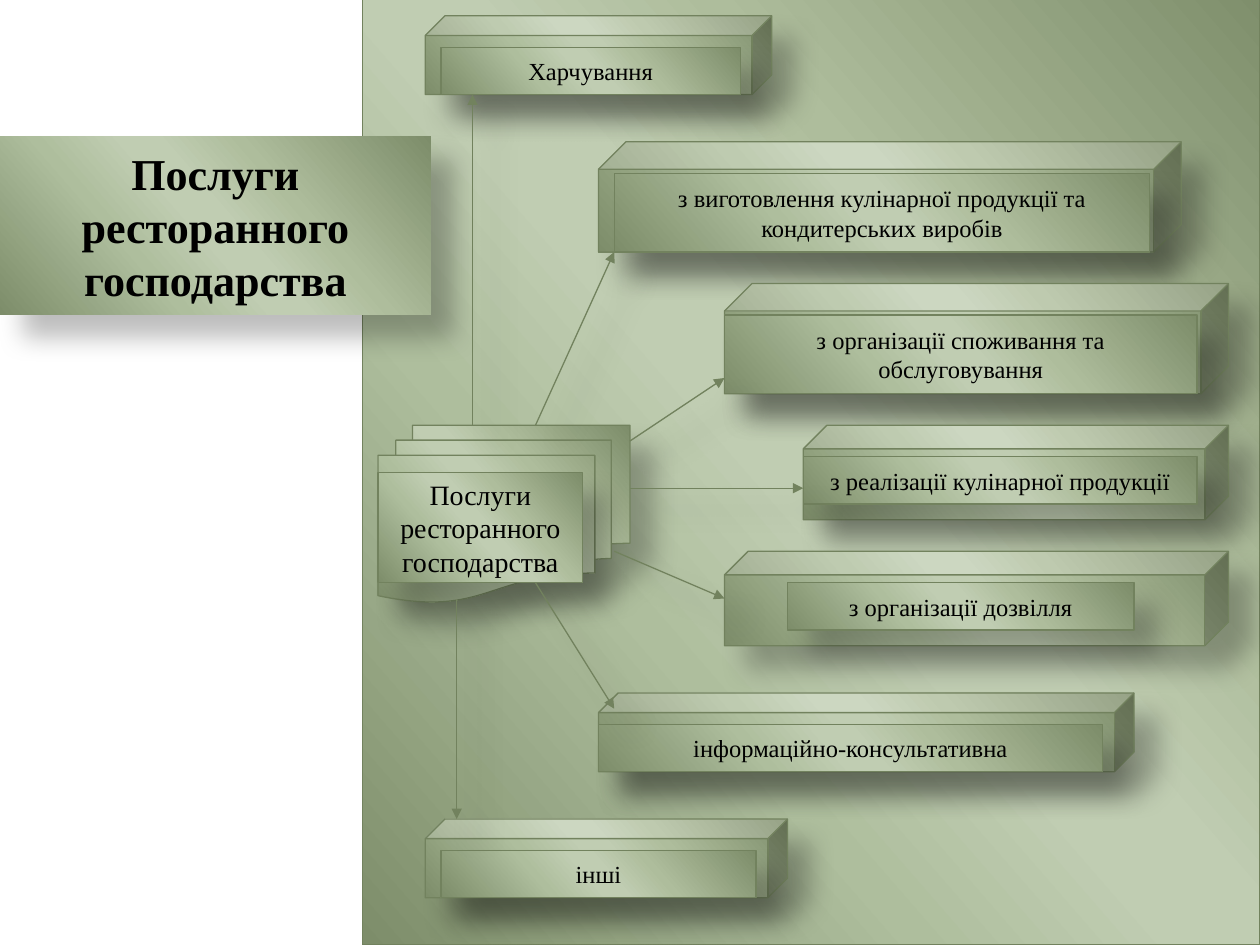
from lxml import etree
from pptx import Presentation, util as u
from pptx.dml.color import RGBColor
from pptx.enum import shapes, text
from pptx.oxml import ns

COLUMNS, ROWS = 80, 60
CELL = u.Inches(10) // COLUMNS
GRADIENT = {0: "7D8D6A", 33: "AEBD9C", 47: "C0CDB2",
            53: "C0CDB2", 68: "AEBE9D", 100: "7D8D6A"}
EDGE = "72825E"
HEADING = "Послуги ресторанного господарства"
SERVICES = [
    ("Харчування", (27, 1, 22, 5), (28, 3, 19, 3)),
    ("з виготовлення кулінарної продукції та кондитерських виробів",
     (38, 9, 37, 7), (39, 11, 34, 5)),
    ("з організації споживання та обслуговування", (46, 18, 32, 7), (46, 20, 30, 5)),
    ("з реалізації кулінарної продукції", (51, 27, 27, 6), (51, 29, 25, 3)),
    ("з організації дозвілля", (46, 35, 32, 6), (50, 37, 22, 3)),
    ("інформаційно-консультативна", (38, 44, 34, 5), (38, 46, 32, 3)),
    ("інші", (27, 52, 23, 5), (28, 54, 20, 3)),
]
ARROWS = [
    ((30, 27), (30, 6)), ((34, 27), (39, 16)), ((40, 28), (46, 24)),
    ((40, 31), (51, 31)), ((39, 35), (46, 38)), ((34, 37), (39, 45)),
    ((29, 38), (29, 52)),
]


def color(value):
    """Turn a hex string into a colour."""
    return RGBColor.from_string(value)


def grid(*cells):
    """Turn grid columns and rows into lengths."""
    return [u.Emu(round(cell * CELL)) for cell in cells]


def node(parent, tag, **values):
    """Add a drawing element with its attributes."""
    return etree.SubElement(parent, ns.qn(tag), {k: str(v) for k, v in values.items()})


def cast_shadow(part):
    """Give a part the soft shadow down to the right."""
    properties = part._element.spPr
    effects = properties.find(ns.qn("a:effectLst"))
    if effects is None:
        effects = node(properties, "a:effectLst")
    shade = node(effects, "a:outerShdw", blurRad=u.Pt(15), dist=u.Pt(18),
                 dir=45 * 60000, sy=90000, rotWithShape=0)
    node(node(shade, "a:srgbClr", val="000000"), "a:alpha", val=26000)


def paint(part):
    """Fill a part with the green gradient and shade it."""
    part.fill.gradient()
    gradient = part._element.spPr.find(ns.qn("a:gradFill"))
    gradient.clear()
    stops = node(gradient, "a:gsLst")
    for share, value in GRADIENT.items():
        node(node(stops, "a:gs", pos=share * 1000), "a:srgbClr", val=value)
    node(gradient, "a:lin", ang=139 * 60000, scaled=0)
    part.shadow.inherit = False
    cast_shadow(part)


def write(part, wording, **font_format):
    """Write centred black text in a part."""
    frame = part.text_frame
    frame.text = wording
    frame_format = {"word_wrap": True, "auto_size": text.MSO_AUTO_SIZE.NONE,
                    "vertical_anchor": text.MSO_ANCHOR.MIDDLE}
    for name, value in frame_format.items():
        setattr(frame, name, value)
    paragraph = frame.paragraphs[0]
    paragraph.alignment = text.PP_ALIGN.CENTER
    font = paragraph.runs[0].font
    for name, value in {"name": "Times New Roman", **font_format}.items():
        setattr(font, name, value)
    font.color.rgb = color("000000")


def add_panel(diagram, kind, box):
    """Add one edged green panel in a grid box."""
    panel = diagram.add_shape(kind, *grid(*box))
    paint(panel)
    panel.line.color.rgb = color(EDGE)
    panel.line.width = u.Pt(0.75)
    return panel


def add_label(diagram, wording, box, size):
    """Add a flat panel with wording."""
    label = add_panel(diagram, shapes.MSO_SHAPE.RECTANGLE, box)
    write(label, wording, size=u.Pt(size))


def add_service(diagram, wording, block_box, label_box):
    """Add a service as a block with a label on its front."""
    add_panel(diagram, shapes.MSO_SHAPE.CUBE, block_box)
    add_label(diagram, wording, label_box, 14)


def add_arrow(diagram, start, end):
    """Add an arrow from the documents to a service."""
    arrow = diagram.add_connector(shapes.MSO_CONNECTOR.STRAIGHT, *grid(*start, *end))
    arrow.line.color.rgb = color(EDGE)
    arrow.line.width = u.Pt(0.75)
    node(arrow._element.spPr.find(ns.qn("a:ln")), "a:tailEnd", type="triangle")
    cast_shadow(arrow)


def add_diagram(slide):
    """Add the backdrop, documents, services and arrows."""
    diagram = slide.shapes.add_group_shape().shapes
    add_panel(diagram, shapes.MSO_SHAPE.RECTANGLE, (23, -2, 57, 62))
    add_panel(diagram, shapes.MSO_SHAPE.FLOWCHART_MULTIDOCUMENT, (24, 27, 16, 11.25))
    for service in SERVICES[:3]:
        add_service(diagram, *service)
    add_label(diagram, HEADING, (24, 30, 13, 7), 16)
    for service in SERVICES[3:]:
        add_service(diagram, *service)
    for start, end in ARROWS:
        add_arrow(diagram, start, end)


def add_heading(slide, box):
    """Set the title in its box in front of the diagram."""
    heading = slide.shapes.title
    for side, length in zip(("left", "top", "width", "height"), grid(*box)):
        setattr(heading, side, length)
    paint(heading)
    write(heading, HEADING, size=u.Pt(25.2), bold=True)
    slide.shapes._spTree.append(heading._element)


def main():
    """Build and save the slide."""
    deck = Presentation()
    deck.slide_width, deck.slide_height = grid(COLUMNS, ROWS)
    slide = deck.slides.add_slide(deck.slide_layouts[5])
    add_diagram(slide)
    add_heading(slide, (0, 8.64, 27.36, 11.36))
    deck.save("out.pptx")


if __name__ == "__main__":
    main()
